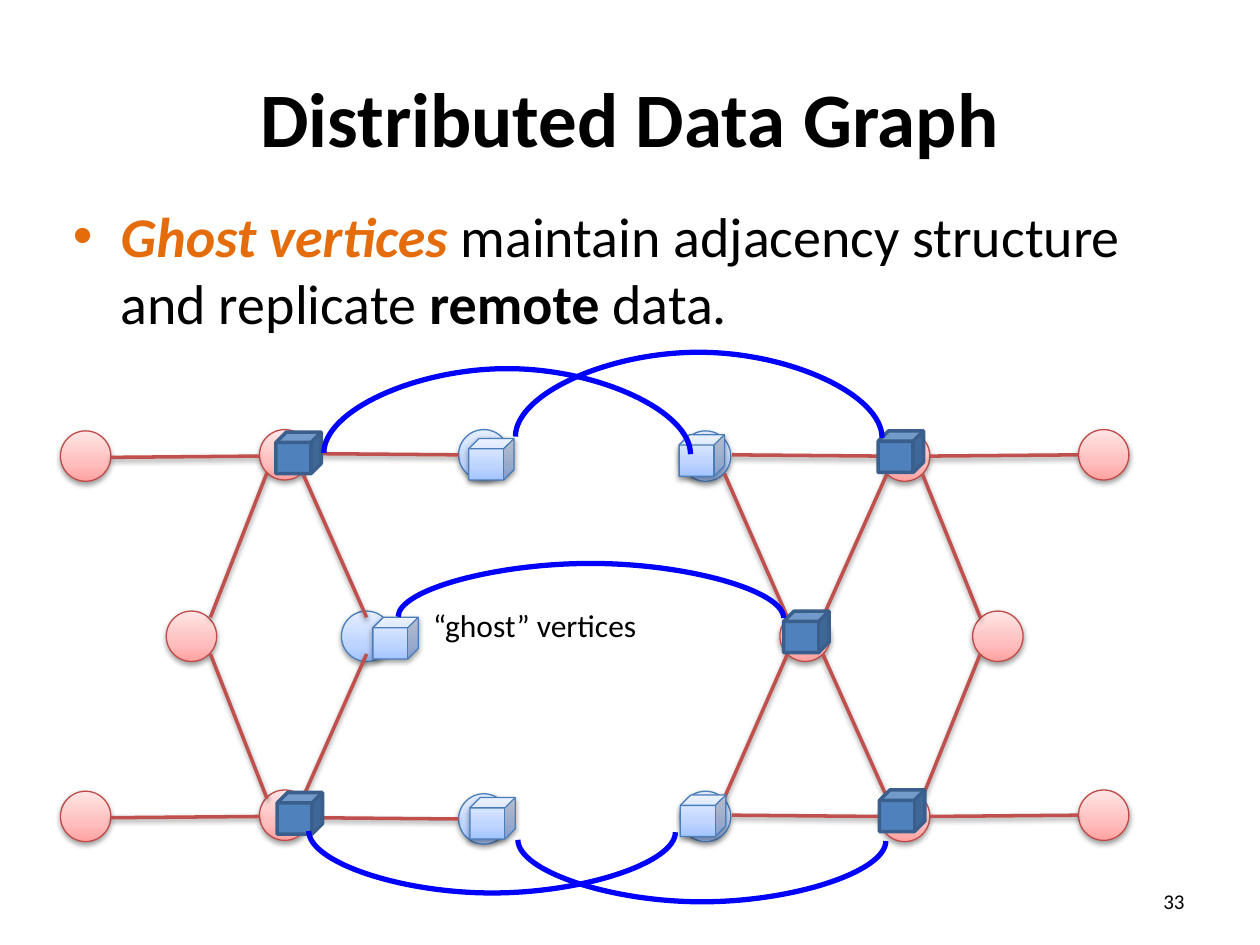
from copy import deepcopy
from lxml.etree import SubElement
from pptx import Presentation
from pptx.dml.color import RGBColor
from pptx.enum.shapes import MSO_CONNECTOR, MSO_SHAPE
from pptx.enum.text import MSO_ANCHOR, PP_ALIGN
from pptx.oxml.ns import qn
from pptx.util import Inches, Pt

PITCH = 2.86
MIRROR = 10.09
RED = (("FFE5E5", "FFBEBD", "FFA2A1"), "BE4B48")
BLUE = (("E5EEFF", "BFD5FF", "A3C4FF"), "4A7EBB")
ENDS = [(0.48, 3.42), (2.06, 3.41), (6.98, 3.42), (8.56, 3.41)]
HUBS = [(1.32, 4.85), (6.19, 4.85), (7.72, 4.85)]
GHOSTS = [(2.71, 4.85), (3.64, 3.41), (3.64, 6.3), (5.4, 3.42), (5.4, 6.28)]
FLATS = [(0.88, 3.63, 2.06, 3.62), (5.81, 3.61, 6.98, 3.62),
         (7.38, 3.62, 8.56, 3.61)]
LINKS = [(2.46, 3.6, 3.64, 3.61), (2.46, 6.49, 3.64, 6.5)]
SLANTS = [(1.67, 4.9, 2.12, 3.75), (2.91, 4.9, 2.4, 3.75),
          (7.78, 4.9, 7.32, 3.76), (6.53, 4.9, 7.04, 3.76),
          (6.25, 4.9, 5.75, 3.76)]
MASTERS = [(6.22, 4.85), (6.97, 3.42), (6.98, 6.27), (2.19, 3.43), (2.2, 6.29)]
COPIES = [(2.96, 4.9), (3.72, 3.48), (3.73, 6.33), (5.39, 3.45), (5.4, 6.31)]
ARCS = [(4.09, 7.0, 3.47, 0.68), (3.16, 6.22, 4.9, 0.43),
        (4.11, 7.03, 6.67, -0.5), (2.57, 5.48, 3.6, 0.68),
        (2.45, 5.36, 6.6, -0.5)]


def color(code):
    """Turn a hex string into a colour."""
    return RGBColor.from_string(code)


def shade(effects):
    """Add a soft drop shadow to an effect list."""
    drop = SubElement(effects, qn("a:outerShdw"), blurRad=str(Pt(3.15)),
                      dist=str(Pt(1.57)), dir="5400000", rotWithShape="0")
    black = SubElement(drop, qn("a:srgbClr"), val="000000")
    SubElement(black, qn("a:alpha"), val="38000")


def stroke(line, code, width):
    """Set the colour and width of a line."""
    line.color.rgb = color(code)
    line.width = Pt(width)


def blend(fill, codes):
    """Fill from top to bottom with three colours."""
    fill.gradient()
    fill.gradient_angle = 270
    last = fill._fill._gradFill.gsLst[-1]
    last.addnext(deepcopy(last))
    for stop, code, place in zip(fill.gradient_stops, codes, (0, 0.65, 1)):
        stop.color.rgb = color(code)
        stop.position = place


def solid(slide, kind, spot, size):
    """Add a preset shape without a theme shadow."""
    shape = slide.shapes.add_shape(kind, *map(Inches, spot + size))
    shape.shadow.inherit = False
    return shape


def glow(slide, kind, spot, size, look):
    """Add a shape with a gradient and a shadow."""
    shape = solid(slide, kind, spot, size)
    blend(shape.fill, look[0])
    stroke(shape.line, look[1], 0.75)
    shade(shape._element.spPr.find(qn("a:effectLst")))


def node(slide, spot, look):
    """Add a round vertex."""
    glow(slide, MSO_SHAPE.OVAL, spot, (0.4, 0.4), look)


def master(slide, spot):
    """Add a dark cube."""
    cube = solid(slide, MSO_SHAPE.CUBE, spot, (0.36, 0.33))
    cube.fill.solid()
    cube.fill.fore_color.rgb = color("4F81BD")
    stroke(cube.line, "3A5F8C", 2)


def wire(slide, kind, ends, code, width):
    """Add a connector and return it with its empty effect list."""
    link = slide.shapes.add_connector(kind, *map(Inches, ends))
    stroke(link.line, code, width)
    return link, SubElement(link._element.spPr, qn("a:effectLst"))


def edge(slide, ends):
    """Add a straight graph edge."""
    shade(wire(slide, MSO_CONNECTOR.STRAIGHT, ends, "C0504D", 2)[1])


def arc(slide, left, right, base, rise):
    """Add a bow between two points on one level."""
    mid, half, thin = (left + right) / 2, (right - left) / 2, 0.01
    ends = (mid + thin / 2, base - half, mid - thin / 2, base + half)
    link = wire(slide, MSO_CONNECTOR.CURVE, ends, "0000FF", 3)[0]
    props = link._element.spPr
    props.find(qn("a:xfrm")).set("rot", "16200000")
    guides = props.find(qn("a:prstGeom")).find(qn("a:avLst"))
    bend = round(-rise / thin * 100000)
    SubElement(guides, qn("a:gd"), name="adj1", fmla=f"val {bend}")


def text(slide, box, size, runs, anchor=MSO_ANCHOR.TOP, align=PP_ALIGN.LEFT):
    """Add a one-paragraph text box and return the paragraph."""
    frame = slide.shapes.add_textbox(*map(Inches, box)).text_frame
    frame.word_wrap = True
    frame.vertical_anchor = anchor
    para = frame.paragraphs[0]
    para.alignment = align
    for words, code, style in runs:
        run = para.add_run()
        run.text = words
        run.font.color.rgb = color(code)
        for key, value in {"name": "Calibri", "size": Pt(size), **style}.items():
            setattr(run.font, key, value)
    return para


def bullet(para):
    """Give a paragraph a hanging bullet."""
    props = para._p.get_or_add_pPr()
    props.set("marL", str(Inches(0.38)))
    props.set("indent", str(Inches(-0.38)))
    SubElement(props, qn("a:buFont"), typeface="Arial")
    SubElement(props, qn("a:buChar"), char="•")


def words(slide):
    """Add the title, the point, the label and the number."""
    bold, black = {"bold": True}, "000000"
    text(slide, (0.5, 0.3, 9, 1.25), 44, [("Distributed Data Graph", black, bold)],
         MSO_ANCHOR.MIDDLE, PP_ALIGN.CENTER)
    point = text(slide, (0.48, 1.55, 9.1, 1.4), 32, [
        ("Ghost vertices ", "E46C0A", {"bold": True, "italic": True}),
        ("maintain adjacency structure and replicate ", black, {}),
        ("remote", black, bold),
        (" data.", black, {})])
    point.space_before = Pt(6.4)
    bullet(point)
    text(slide, (3.34, 4.76, 2.57, 0.5), 18, [("“ghost” vertices", black, {})])
    text(slide, (7.17, 6.95, 2.33, 0.4), 12, [("33", black, {})],
         MSO_ANCHOR.MIDDLE, PP_ALIGN.RIGHT)


def graph(slide):
    """Add the vertices and edges of both halves."""
    lower = [(x, y + PITCH) for x, y in ENDS]
    for spot in HUBS + ENDS + lower:
        node(slide, spot, RED)
    drops = [(a, b + PITCH, c, d + PITCH) for a, b, c, d in FLATS]
    flips = [(a, MIRROR - b, c, MIRROR - d) for a, b, c, d in SLANTS]
    for spot in GHOSTS:
        node(slide, spot, BLUE)
    for ends in FLATS + drops + LINKS + SLANTS + flips:
        edge(slide, ends)


def main():
    """Build and save the slide."""
    deck = Presentation()
    deck.slide_width, deck.slide_height = Inches(10), Inches(7.5)
    slide = deck.slides.add_slide(deck.slide_layouts[6])
    words(slide)
    graph(slide)
    for spot in MASTERS:
        master(slide, spot)
    for spot in COPIES:
        glow(slide, MSO_SHAPE.CUBE, spot, (0.36, 0.33), BLUE)
    for bow in ARCS:
        arc(slide, *bow)
    deck.save("out.pptx")


if __name__ == "__main__":
    main()
